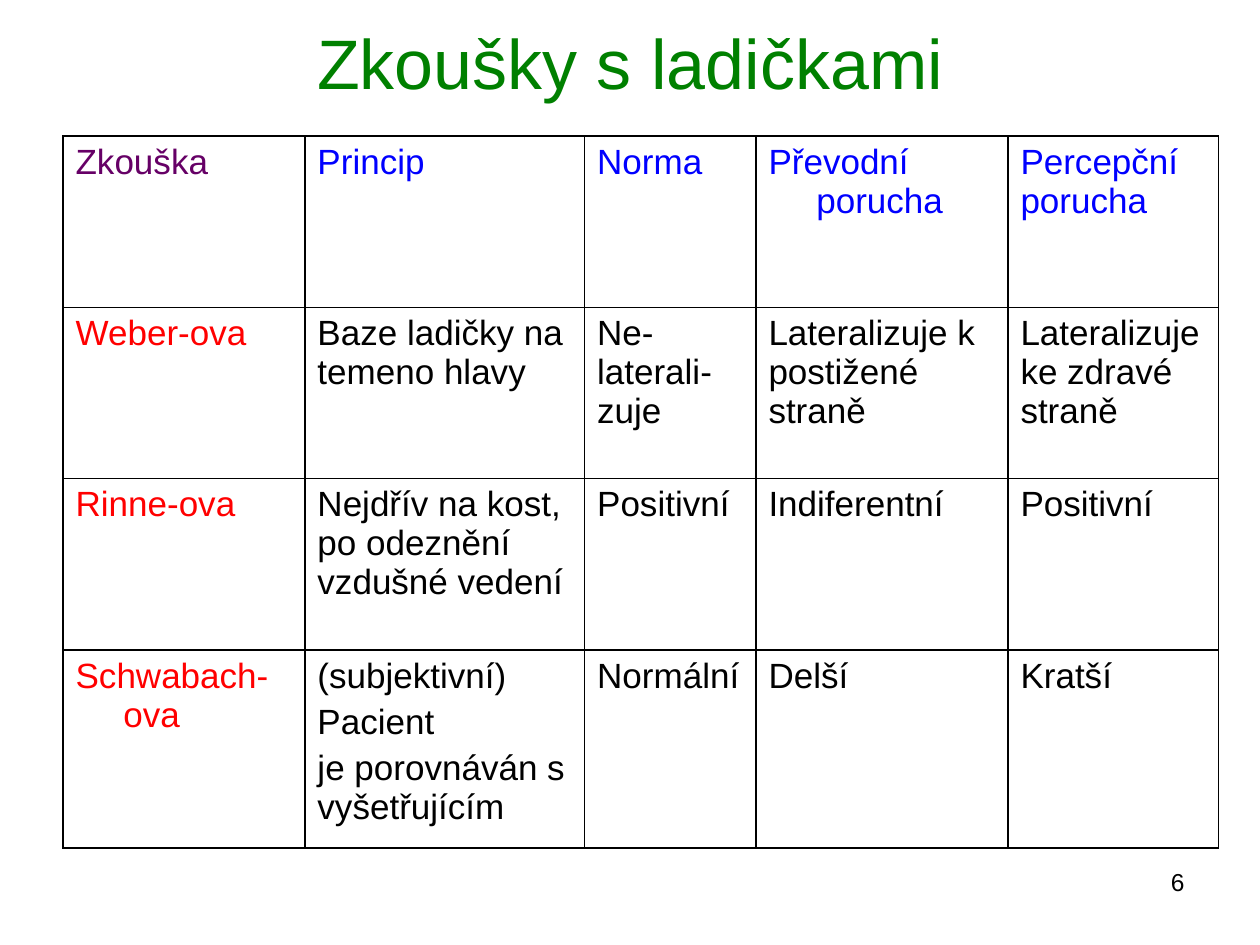
"""Builds a slide with a table that compares tuning fork hearing tests."""
from dataclasses import dataclass

from lxml import etree
from pptx import Presentation
from pptx.dml.color import RGBColor
from pptx.enum.text import MSO_ANCHOR, PP_ALIGN
from pptx.oxml.ns import qn
from pptx.slide import Slide
from pptx.util import Inches, Pt

LEFT, CENTER, RIGHT = PP_ALIGN.LEFT, PP_ALIGN.CENTER, PP_ALIGN.RIGHT
TOP, MIDDLE = MSO_ANCHOR.TOP, MSO_ANCHOR.MIDDLE

BLACK = RGBColor(0x00, 0x00, 0x00)
GREEN = RGBColor(0x00, 0x80, 0x00)
PURPLE = RGBColor(0x66, 0x00, 0x66)
BLUE = RGBColor(0x00, 0x00, 0xFF)
RED = RGBColor(0xFF, 0x00, 0x00)

COLUMN_WIDTHS = [1.92, 2.22, 1.36, 2, 1.67]
ROW_HEIGHTS = [1.36, 1.36, 1.36, 1.57]
TESTS = [
    ["Zkouška", "Princip", "Norma", "Převodní porucha", "Percepční\nporucha"],
    ["Weber-ova", "Baze ladičky na temeno hlavy", "Ne-laterali-zuje",
     "Lateralizuje k postižené straně", "Lateralizuje ke zdravé straně"],
    ["Rinne-ova", "Nejdřív na kost, po odeznění vzdušné vedení", "Positivní",
     "Indiferentní", "Positivní"],
    ["Schwabach-ova", "(subjektivní)\nPacient\nje porovnáván s vyšetřujícím",
     "Normální", "Delší", "Kratší"],
]


def write_text(frame, text, *, font="Arial", size=20, color=BLACK, align=LEFT,
               hanging=0, space_before=0):
    for index, line in enumerate(text.split("\n")):
        paragraph = frame.add_paragraph() if index else frame.paragraphs[0]
        paragraph.alignment = align
        if index:
            paragraph.space_before = Pt(space_before)
        if hanging:
            properties = paragraph._p.get_or_add_pPr()
            properties.set("marL", str(Inches(hanging)))
            properties.set("indent", str(-Inches(hanging)))
        run = paragraph.add_run()
        run.text = line
        run.font.name = font
        run.font.size = Pt(size)
        run.font.color.rgb = color


@dataclass
class SlideBuilder:
    slide: Slide
    font: str = "Arial"
    border_color: RGBColor = BLACK
    border_width: float = 1

    def text(self, text, left, top, width, height, anchor=TOP, **text_format):
        shape = self.slide.shapes.add_textbox(
            Inches(left), Inches(top), Inches(width), Inches(height))
        frame = shape.text_frame
        frame.word_wrap = True
        frame.vertical_anchor = anchor
        write_text(frame, text, font=self.font, **text_format)

    def border(self, cell):
        properties = cell._tc.get_or_add_tcPr()
        for side in ("a:lnL", "a:lnR", "a:lnT", "a:lnB"):
            line = etree.SubElement(properties, qn(side), w=str(Pt(self.border_width)))
            fill = etree.SubElement(line, qn("a:solidFill"))
            etree.SubElement(fill, qn("a:srgbClr"), val=str(self.border_color))

    def table(self, rows, left, top, column_widths, row_heights, cell_format):
        shape = self.slide.shapes.add_table(
            len(rows), len(column_widths), Inches(left), Inches(top),
            Inches(sum(column_widths)), Inches(sum(row_heights)))
        table = shape.table
        table.first_row = table.horz_banding = False
        for column, width in zip(table.columns, column_widths):
            column.width = Inches(width)
        for row, height in zip(table.rows, row_heights):
            row.height = Inches(height)
        for row_index, row in enumerate(rows):
            for column_index, text in enumerate(row):
                cell = table.cell(row_index, column_index)
                self.border(cell)
                cell.fill.background()
                write_text(cell.text_frame, text, font=self.font,
                           **cell_format(row_index, column_index))


def test_cell_format(row, column):
    if row == 0:
        return {"color": BLUE if column else PURPLE, "hanging": 0.38}
    if column == 0:
        return {"color": RED, "hanging": 0.38}
    return {"space_before": 4}


def main():
    presentation = Presentation()
    presentation.slide_width = Inches(10)
    presentation.slide_height = Inches(7.5)
    builder = SlideBuilder(presentation.slides.add_slide(presentation.slide_layouts[6]))
    builder.text("6", 7.17, 6.83, 2.33, 0.52, size=14, align=RIGHT)
    builder.table(TESTS, 0.5, 1.08, COLUMN_WIDTHS, ROW_HEIGHTS, test_cell_format)
    builder.text("Zkoušky s ladičkami", 0.5, 0.3, 9, 0.37, anchor=MIDDLE,
                 size=40, color=GREEN, align=CENTER)
    presentation.save("out.pptx")


if __name__ == "__main__":
    main()
